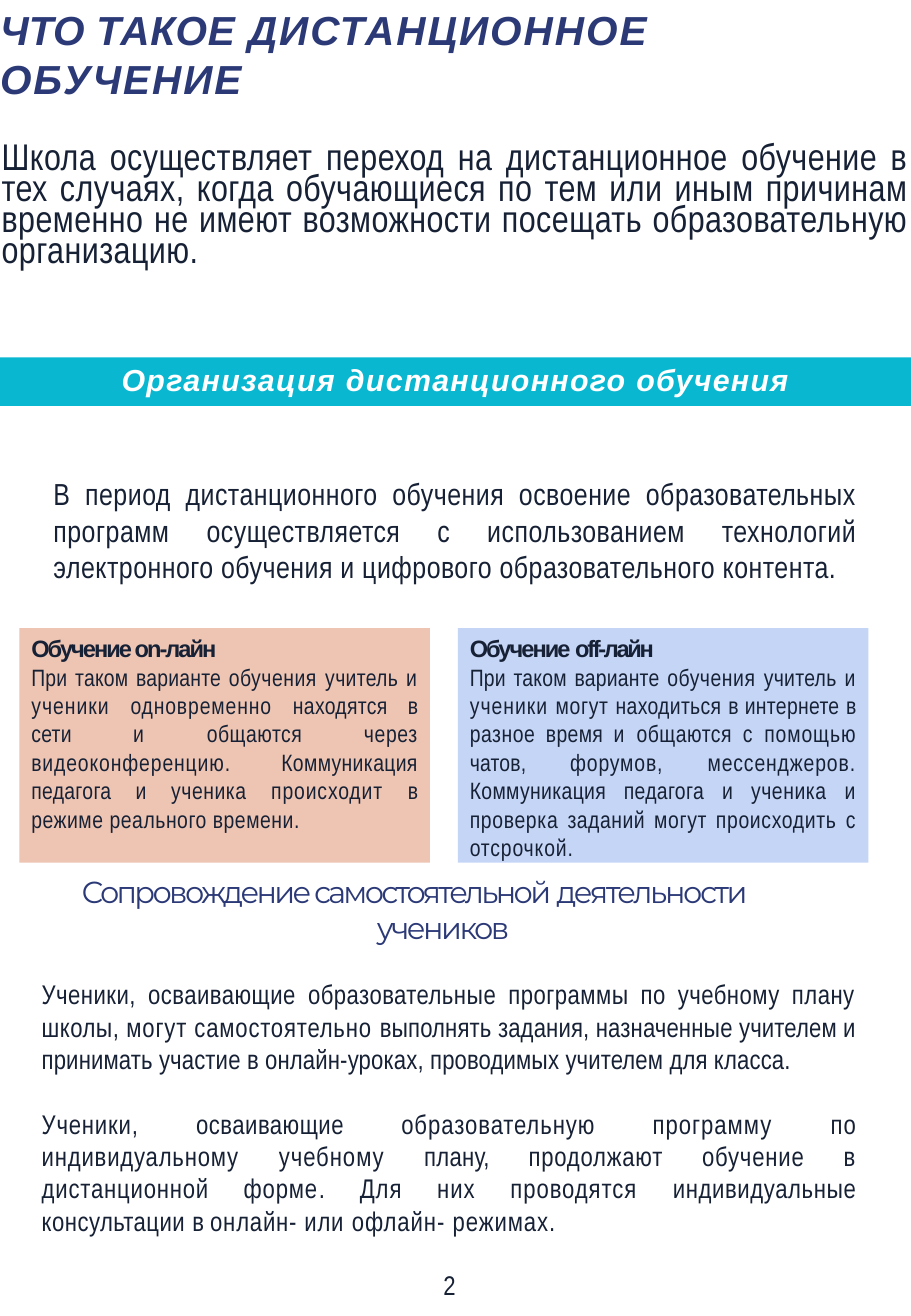
from dataclasses import dataclass

from pptx import Presentation
from pptx.dml.color import RGBColor
from pptx.enum.shapes import MSO_SHAPE
from pptx.enum.text import MSO_ANCHOR, MSO_AUTO_SIZE, PP_ALIGN
from pptx.util import Inches, Pt

LEFT, CENTER, JUSTIFY = PP_ALIGN.LEFT, PP_ALIGN.CENTER, PP_ALIGN.JUSTIFY
TOP, RECTANGLE, FIXED = MSO_ANCHOR.TOP, MSO_SHAPE.RECTANGLE, MSO_AUTO_SIZE.NONE
TITLE_ONLY = 5


@dataclass(frozen=True)
class Style:
    """Look of one kind of paragraph, lengths in points."""
    font: str
    size: float
    color: str
    bold: bool = False
    italic: bool = False
    align: int = JUSTIFY
    leading: float | None = None
    margin: float = 0
    indent: float = 0


@dataclass(frozen=True)
class Theme:
    """Colours and paragraph styles of the page."""
    band: str = "09B7D1"
    online: str = "EEC5B3"
    offline: str = "C5D5F6"
    title: Style = Style("Arial", 24, "2B3977", True, True, LEFT)
    intro: Style = Style("Arial Narrow", 22, "172135", leading=18.3)
    banner: Style = Style("Arial", 18, "FFFFFF", True, True, CENTER)
    period: Style = Style("Arial Narrow", 18, "172135")
    card_head: Style = Style("Arial", 14, "172135", True)
    card_text: Style = Style("Arial Narrow", 14, "172135")
    support: Style = Style("Montserrat", 18, "2B3977", align=LEFT, margin=198.7, indent=-175)
    body: Style = Style("Arial Narrow", 16, "172135")
    number: Style = Style("Arial Narrow", 16, "172135", align=CENTER)


@dataclass(frozen=True)
class Frame:
    """Place on the page, in percent of its width and height."""
    left: float
    top: float
    width: float
    height: float


@dataclass(frozen=True)
class Paragraph:
    """Styled spans, each a letter spacing in points and its text."""
    style: Style
    spans: list[tuple[float, str]]
    before: float = 0


@dataclass(frozen=True)
class Block:
    """A framed text with insets in points and an optional fill."""
    frame: Frame
    paragraphs: list[Paragraph]
    fill: str | None = None
    side: float = 0
    inset: float = 1


THEME = Theme()
CARD_LEFT, CARD_STEP = 2.13, 48.13


def card(column: int, fill: str, head: list[tuple[float, str]], text: list[tuple[float, str]]) -> Block:
    """Describe one of the two learning mode cards."""
    frame = Frame(CARD_LEFT + column * CARD_STEP, 47.74, 45.07, 17.82)
    paragraphs = [Paragraph(THEME.card_head, head), Paragraph(THEME.card_text, text)]
    return Block(frame, paragraphs, fill, side=7.2, inset=3.6)


TITLE = Block(Frame(0, 0.28, 74.53, 7.57), [Paragraph(THEME.title, [
    (0.1, "ЧТО "), (0.5, "ТАКОЕ "), (1.2, "ДИСТАНЦИОННОЕ ОБУЧЕНИЕ")])])

BLOCKS = [
    Block(Frame(0, 10.9, 100, 12.19), [Paragraph(THEME.intro, [
        (0.3, "Школа осуществляет переход на дистанционное обучение в тех случаях, когда обучающиеся "
              "по тем или иным причинам временно не имеют возможности посещать образовательную "
              "организацию.")])], side=1, inset=2.2),
    Block(Frame(0, 27.15, 100, 3.69), [Paragraph(THEME.banner, [
        (0.8, "Организация дистанционного обучения")])], THEME.band, inset=2),
    Block(Frame(5.87, 36.01, 88.27, 8.77), [Paragraph(THEME.period, [
        (0.3, "В период дистанционного обучения освоение образовательных программ осуществляется "
              "с использованием технологий электронного обучения и цифрового образовательного "
              "контента.")])]),
    card(0, THEME.online, [(-1.2, "Обучение on-лайн")], [
        (0.1, "При таком варианте о"), (0.3, "бучения "), (0.2, "учитель "), (0.6, "и ученики "),
        (0.5, "одновременно "), (0.2, "находятся "), (0, "в "), (0.2, "сети "), (0.6, "и "),
        (0.3, "общаются "), (0.4, "через "), (0.5, "видеоконференцию. "),
        (0.2, "Коммуникация педагога "), (0.3, "и ученика "), (0.5, "происходит "), (0, "в "),
        (0.3, "режиме реального времени.")]),
    card(1, THEME.offline, [(-1.2, "Обучение "), (-1.4, "off-лайн")], [
        (0.1, "При таком варианте "), (0.3, "обучения "), (0.2, "учитель "), (0.6, "и ученики "),
        (0.4, "могут "), (0.2, "находиться "), (0, "в "), (0.2, "интернете "), (0, "в "),
        (0.3, "разное "), (0.2, "время "), (0.6, "и "), (0.3, "общаются "), (0.6, "с "),
        (0.5, "помощью "), (0.1, "чатов, "), (0.5, "форумов, мессенджеров. "),
        (0.2, "Коммуникация педагога "), (0.3, "и ученика "), (0.6, "и "), (0.4, "проверка "),
        (0.3, "заданий "), (0.4, "могут происходить "), (0.6, "с "), (0.5, "отсрочкой.")]),
    Block(Frame(4.4, 66.2, 89.87, 32.96), [
        Paragraph(THEME.support, [
            (-1.6, "Сопровождение самостоятельной "), (-1.4, "деятельности "), (-1.5, "учеников")]),
        Paragraph(THEME.body, [
            (0.3, "Ученики, осваивающие образовательные программы по учебному плану школы, "),
            (0.5, "могут самостоятельно "),
            (0.1, "выполнять задания, назначенные учителем и принимать участие в онлайн-уроках, "
                  "проводимых учителем для класса.")], 19),
        Paragraph(THEME.body, [
            (0.5, "Ученики, "), (0.3, "осваивающие "), (0.6, "образовательную программу "),
            (0.7, "по "), (0.5, "индивидуальному "), (0.6, "учебному "), (0.2, "плану, "),
            (0.5, "продолжают обучение в дистанционной форме"), (0.3, ". "),
            (0.6, "Для них проводятся "), (0.4, "индивидуальные "), (0.3, "консультации "),
            (0, "в "), (0.5, "онлайн- или "), (0.6, "офлайн- режимах.")], 19),
        Paragraph(THEME.number, [(0.2, "2")], 19)], side=1),
]


def place(deck, frame: Frame) -> tuple[int, int, int, int]:
    """Turn a frame into slide lengths."""
    across, down = deck.slide_width / 100, deck.slide_height / 100
    return (round(frame.left * across), round(frame.top * down),
            round(frame.width * across), round(frame.height * down))


def write_paragraph(para, content: Paragraph) -> None:
    """Fill and format one paragraph."""
    style = content.style
    para.alignment = style.align
    para.space_before = Pt(content.before)
    para.line_spacing = Pt(style.leading) if style.leading else 1.0
    properties = para._p.get_or_add_pPr()
    properties.set("marL", str(Pt(style.margin)))
    properties.set("indent", str(Pt(style.indent)))
    font = para.font
    font.name, font.size = style.font, Pt(style.size)
    font.bold, font.italic = style.bold, style.italic
    font.color.rgb = RGBColor.from_string(style.color)
    for spacing, text in content.spans:
        span = para.add_run()
        span.text = text
        span._r.get_or_add_rPr().set("spc", str(round(spacing * 100)))


def write_block(box, block: Block) -> None:
    """Set the insets of a box and write its paragraphs."""
    text = box.text_frame
    text.word_wrap, text.auto_size, text.vertical_anchor = True, FIXED, TOP
    text.margin_left = text.margin_right = Pt(block.side)
    text.margin_top, text.margin_bottom = Pt(block.inset), 0
    for index, content in enumerate(block.paragraphs):
        para = text.add_paragraph() if index else text.paragraphs[0]
        write_paragraph(para, content)


def add_block(deck, page, block: Block) -> None:
    """Draw a filled rectangle or a plain text box with its text."""
    area = place(deck, block.frame)
    if block.fill:
        box = page.shapes.add_shape(RECTANGLE, *area)
        box.shadow.inherit = False
        box.fill.solid()
        box.fill.fore_color.rgb = RGBColor.from_string(block.fill)
        box.line.fill.background()
    else:
        box = page.shapes.add_textbox(*area)
    write_block(box, block)


def main() -> None:
    """Build the page and save the deck."""
    deck = Presentation()
    deck.slide_width, deck.slide_height = Inches(7.5), Inches(10.83)
    page = deck.slides.add_slide(deck.slide_layouts[TITLE_ONLY])
    title = page.shapes.title
    title.left, title.top, title.width, title.height = place(deck, TITLE.frame)
    write_block(title, TITLE)
    for block in BLOCKS:
        add_block(deck, page, block)
    deck.save("out.pptx")


if __name__ == "__main__":
    main()
